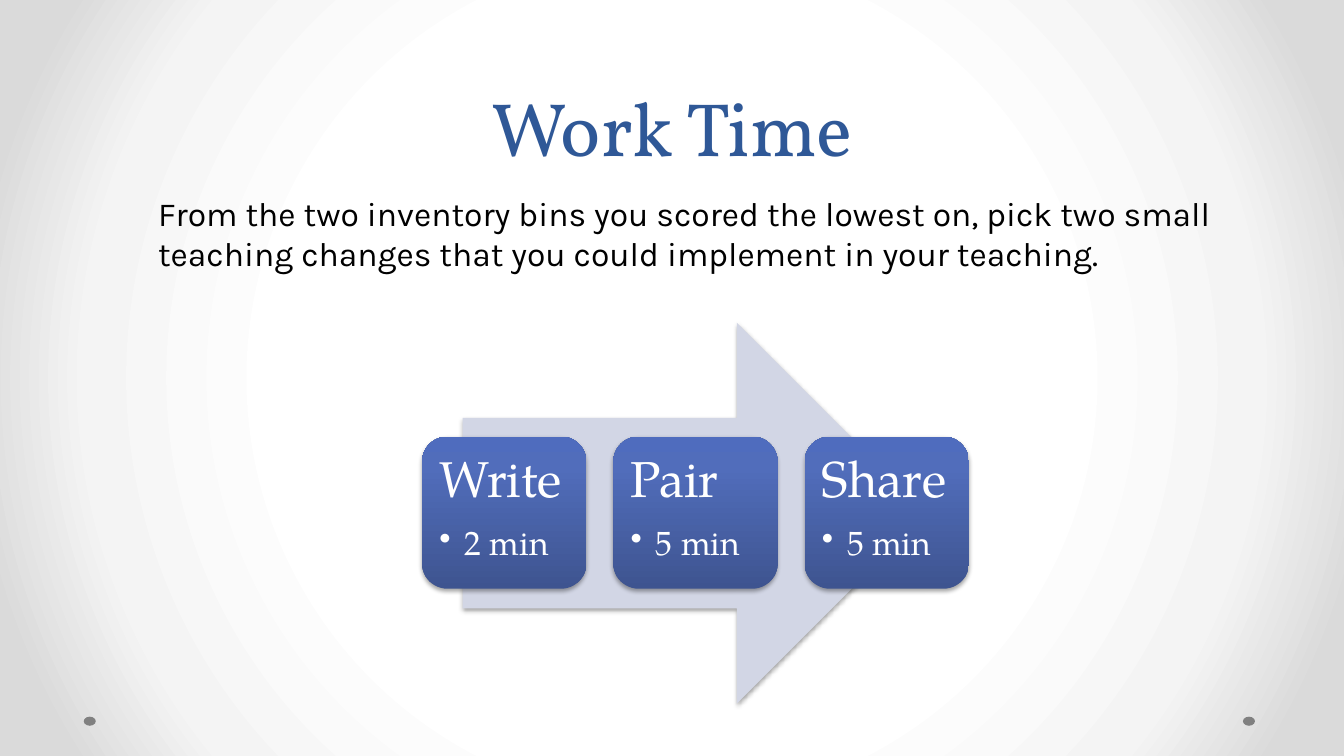
import lxml.etree
import pptx
import pptx.dml.color
import pptx.enum.shapes
import pptx.enum.text
import pptx.oxml.ns
import pptx.util

TITLE = "Work Time"
TASK = ("From the two inventory bins you scored the lowest on, pick two small "
        "teaching changes that you could implement in your teaching.")
STEPS = [("Write", "2 min"), ("Pair", "5 min"), ("Share", "5 min")]

COLOURS = {"title": "2F5897", "body": "000000", "card text": "FFFFFF",
           "arrow": "D2D6E5", "dot": "808080", "shadow": "000000"}
BACKGROUND_STOPS = [(50, "FFFFFF"), (76, "F4F4F4"), (92, "DADADA")]
CARD_STOPS = [(0, "3E5490"), (80, "516DBB"), (100, "4F6CBE")]

# Lengths in points: left, top, width, height
TITLE_BOX = (48, 0, 864, 126)
TASK_BOX = (105.84, 133.92, 775.44, 356.4)
ARROW_BOX = (330.5, 230.4, 331.9, 272.2)
FIRST_CARD_BOX = (301.5, 311.8, 117.4, 108.7)
CARD_PITCH = 136.6
DOT_LEFTS = (59.8, 887.8)
DOT_TOP, DOT_WIDTH, DOT_HEIGHT = 511.9, 8.6, 6.5
CARD_INSET = 7.2
BULLET_INDENT = 18

Pt = pptx.util.Pt
SHAPES = pptx.enum.shapes.MSO_SHAPE
ANCHOR = pptx.enum.text.MSO_ANCHOR
ALIGN = pptx.enum.text.PP_ALIGN
qn = pptx.oxml.ns.qn


def rgb(name):
    return pptx.dml.color.RGBColor.from_string(COLOURS[name])


def add_child(parent, tag, **attributes):
    child = lxml.etree.SubElement(parent, qn(tag))
    for name, value in attributes.items():
        child.set(name, str(value))
    return child


def set_gradient(owner, fill, stops):
    """Give the fill these stops and return its emptied element for the direction."""
    fill.gradient()
    gradient = next(owner.element.iter(qn("a:gradFill")))
    for child in list(gradient):
        gradient.remove(child)
    stop_list = add_child(gradient, "a:gsLst")
    for percent, colour in stops:
        stop = add_child(stop_list, "a:gs", pos=percent * 1000)
        add_child(stop, "a:srgbClr", val=colour)
    return gradient


def add_plain_shape(slide, kind, box):
    shape = slide.shapes.add_shape(kind, *map(Pt, box))
    shape.line.fill.background()
    shape.shadow.inherit = False
    return shape


def add_soft_shadow(shape):
    effects = shape.element.spPr.find(qn("a:effectLst"))
    shadow = add_child(effects, "a:outerShdw", blurRad=Pt(3.1), dist=Pt(1.8),
                       dir=90 * 60000, rotWithShape=0)
    colour = add_child(shadow, "a:srgbClr", val=COLOURS["shadow"])
    add_child(colour, "a:alpha", val=35000)


def format_runs(paragraph, font, size, colour):
    for run in paragraph.runs:
        run.font.name = font
        run.font.size = Pt(size)
        run.font.color.rgb = rgb(colour)


def add_text(slide, box, text, font, size, colour):
    frame = slide.shapes.add_textbox(*map(Pt, box)).text_frame
    frame.word_wrap = True
    frame.text = text
    paragraph = frame.paragraphs[0]
    format_runs(paragraph, font, size, colour)
    return frame, paragraph


def add_background(slide):
    gradient = set_gradient(slide, slide.background.fill, BACKGROUND_STOPS)
    path = add_child(gradient, "a:path", path="circle")
    add_child(path, "a:fillToRect", l=50000, t=50000, r=50000, b=50000)


def add_card(slide, box, step, duration):
    card = add_plain_shape(slide, SHAPES.ROUNDED_RECTANGLE, box)
    gradient = set_gradient(card, card.fill, CARD_STOPS)
    add_child(gradient, "a:lin", ang=270 * 60000, scaled=0)
    add_soft_shadow(card)

    frame = card.text_frame
    frame.word_wrap = True
    frame.vertical_anchor = ANCHOR.TOP
    frame.margin_left = frame.margin_right = Pt(CARD_INSET)
    frame.margin_top = frame.margin_bottom = Pt(CARD_INSET)
    frame.text = f"{step}\n{duration}"
    heading, bullet = frame.paragraphs
    for paragraph, size, space in ((heading, 36, 12.6), (bullet, 24, 3.6)):
        paragraph.alignment = ALIGN.LEFT
        paragraph.line_spacing = 0.9
        paragraph.space_after = Pt(space)
        format_runs(paragraph, "TeX Gyre Pagella", size, "card text")

    bullet.level = 1
    properties = bullet._p.get_or_add_pPr()
    properties.set("marL", str(Pt(BULLET_INDENT)))
    properties.set("indent", str(-Pt(BULLET_INDENT)))
    add_child(properties, "a:buChar", char="•")


def main():
    presentation = pptx.Presentation()
    presentation.slide_width, presentation.slide_height = Pt(960), Pt(540)
    slide = presentation.slides.add_slide(presentation.slide_layouts[6])
    add_background(slide)

    for left in DOT_LEFTS:
        dot = add_plain_shape(slide, SHAPES.OVAL, (left, DOT_TOP, DOT_WIDTH, DOT_HEIGHT))
        dot.fill.solid()
        dot.fill.fore_color.rgb = rgb("dot")

    frame, paragraph = add_text(slide, TITLE_BOX, TITLE, "Vollkorn", 54, "title")
    frame.vertical_anchor = ANCHOR.BOTTOM
    paragraph.alignment = ALIGN.CENTER
    paragraph.line_spacing = Pt(58)

    frame, paragraph = add_text(slide, TASK_BOX, TASK, "Karla", 24, "body")
    paragraph.space_before = Pt(4.8)

    arrow = add_plain_shape(slide, SHAPES.RIGHT_ARROW, ARROW_BOX)
    arrow.fill.solid()
    arrow.fill.fore_color.rgb = rgb("arrow")
    add_soft_shadow(arrow)

    left, top, width, height = FIRST_CARD_BOX
    for index, (step, duration) in enumerate(STEPS):
        add_card(slide, (left + index * CARD_PITCH, top, width, height), step, duration)

    presentation.save("out.pptx")


if __name__ == "__main__":
    main()
